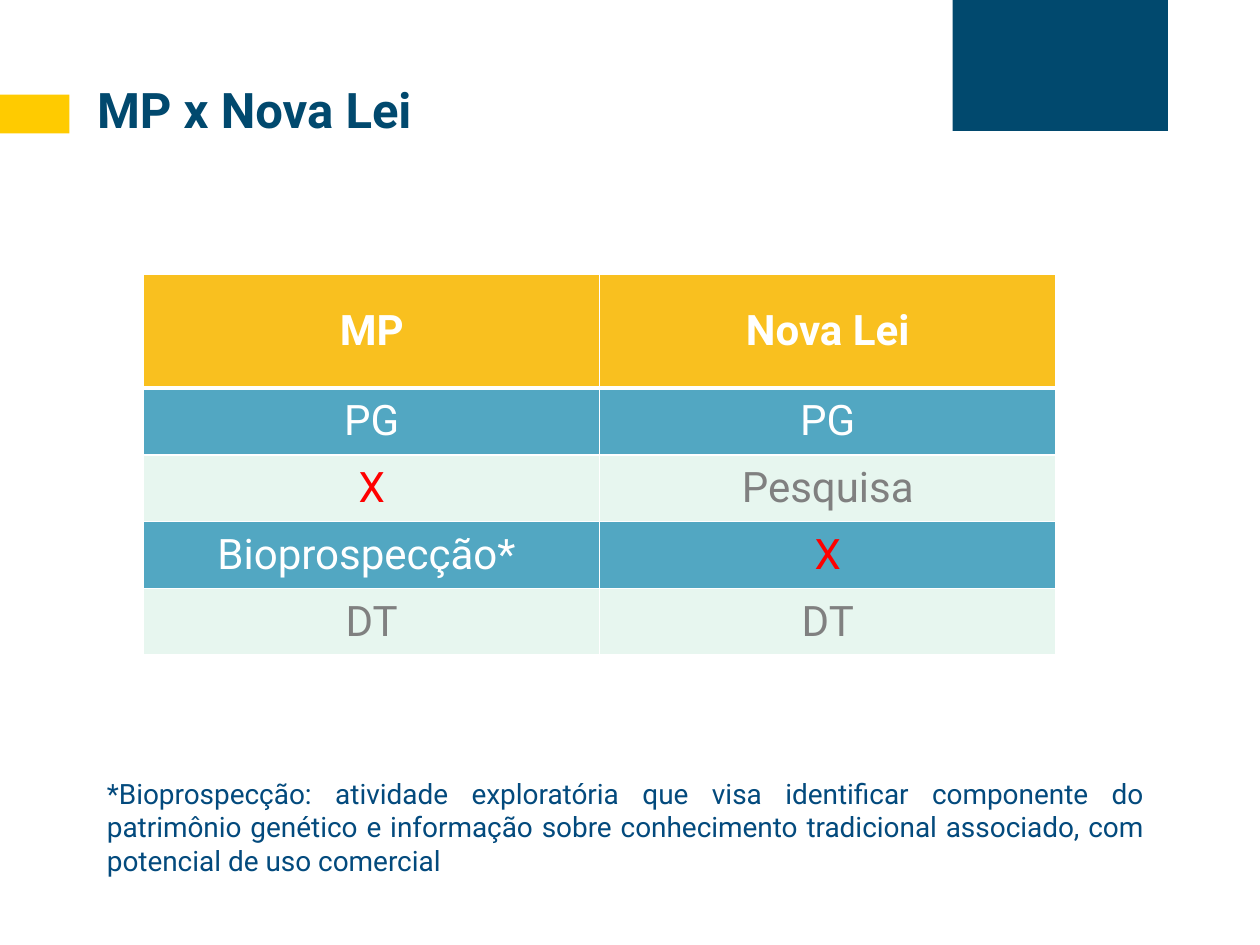
"""Build the slide comparing the MP with the Nova Lei."""
import pptx
import pptx.dml.color
import pptx.enum.shapes
import pptx.enum.text
import pptx.oxml
import pptx.oxml.ns
import pptx.util

Inches = pptx.util.Inches
Pt = pptx.util.Pt
ALIGN = pptx.enum.text.PP_ALIGN
MIDDLE = pptx.enum.text.MSO_ANCHOR.MIDDLE


def rgb(value):
    """Return the colour for a hex string."""
    return pptx.dml.color.RGBColor.from_string(value)


def write(tf, text, color, align, **formats):
    """Put one formatted paragraph in a text frame."""
    p = tf.paragraphs[0]
    p.alignment = align
    r = p.add_run()
    r.text = text
    r.font.color.rgb = rgb(color)
    for name, value in {"name": "Roboto", "bold": False, **formats}.items():
        setattr(r.font, name, value)


prs = pptx.Presentation()
prs.slide_width, prs.slide_height = Inches(10), Inches(7.5)
s = prs.slides.add_slide(prs.slide_layouts[5])

for box, color in [
    ((0, 0.75, 0.55, 0.31), "FFCB00"),
    ((7.56, 0, 1.71, 1.04), "01496E"),
]:
    sp = s.shapes.add_shape(
        pptx.enum.shapes.MSO_SHAPE.RECTANGLE, *map(Inches, box)
    )
    sp.shadow.inherit = False
    sp.fill.solid()
    sp.fill.fore_color.rgb = rgb(color)
    sp.line.fill.background()

title = s.shapes.title
place = {"left": 0.67, "top": 0.58, "width": 8.27, "height": 0.57}
for name, value in place.items():
    setattr(title, name, Inches(value))
title.text_frame.vertical_anchor = MIDDLE
write(title.text_frame, "MP x Nova Lei", "01496E", ALIGN.LEFT,
      size=Pt(28), bold=True)

rows = [
    ("F9C01F", [("MP", "FFFFFF"), ("Nova Lei", "FFFFFF")]),
    ("52A7C2", [("PG", "FFFFFF"), ("PG", "FFFFFF")]),
    ("E7F6EF", [("X", "FF0000"), ("Pesquisa", "808080")]),
    ("52A7C2", [("Bioprospecção* ", "FFFFFF"), ("X", "FF0000")]),
    ("E7F6EF", [("DT", "808080"), ("DT", "808080")]),
]
table = s.shapes.add_table(
    len(rows), 2, Inches(1.14), Inches(2.18), Inches(7.24), Inches(3.02)
).table
for i, (fill, cells) in enumerate(rows):
    table.rows[i].height = Inches(0.53 if i else 0.9)
    for j, (text, color) in enumerate(cells):
        cell = table.cell(i, j)
        cell.vertical_anchor = MIDDLE
        write(cell.text_frame, text, color, ALIGN.CENTER,
              size=Pt(24), bold=i == 0)
        widths = {"L": 1, "R": 1, "T": 3 if i == 1 else 1, "B": 1 if i else 3}
        for side, width in widths.items():
            cell._tc.get_or_add_tcPr().append(pptx.oxml.parse_xml(
                f'<a:ln{side} {pptx.oxml.ns.nsdecls("a")} w="{Pt(width)}">'
                '<a:solidFill><a:srgbClr val="FFFFFF"/></a:solidFill>'
                f'</a:ln{side}>'
            ))
        cell.fill.solid()
        cell.fill.fore_color.rgb = rgb(fill)

tf = s.shapes.add_textbox(
    Inches(0.75), Inches(6.11), Inches(8.43), Inches(0.91)
).text_frame
tf.word_wrap = True
write(
    tf,
    "*Bioprospecção: atividade exploratória que visa identificar componente "
    "do patrimônio genético e informação sobre conhecimento tradicional "
    "associado, com potencial de uso comercial",
    "034A7D", ALIGN.JUSTIFY, size=Pt(16),
)

prs.save("out.pptx")
